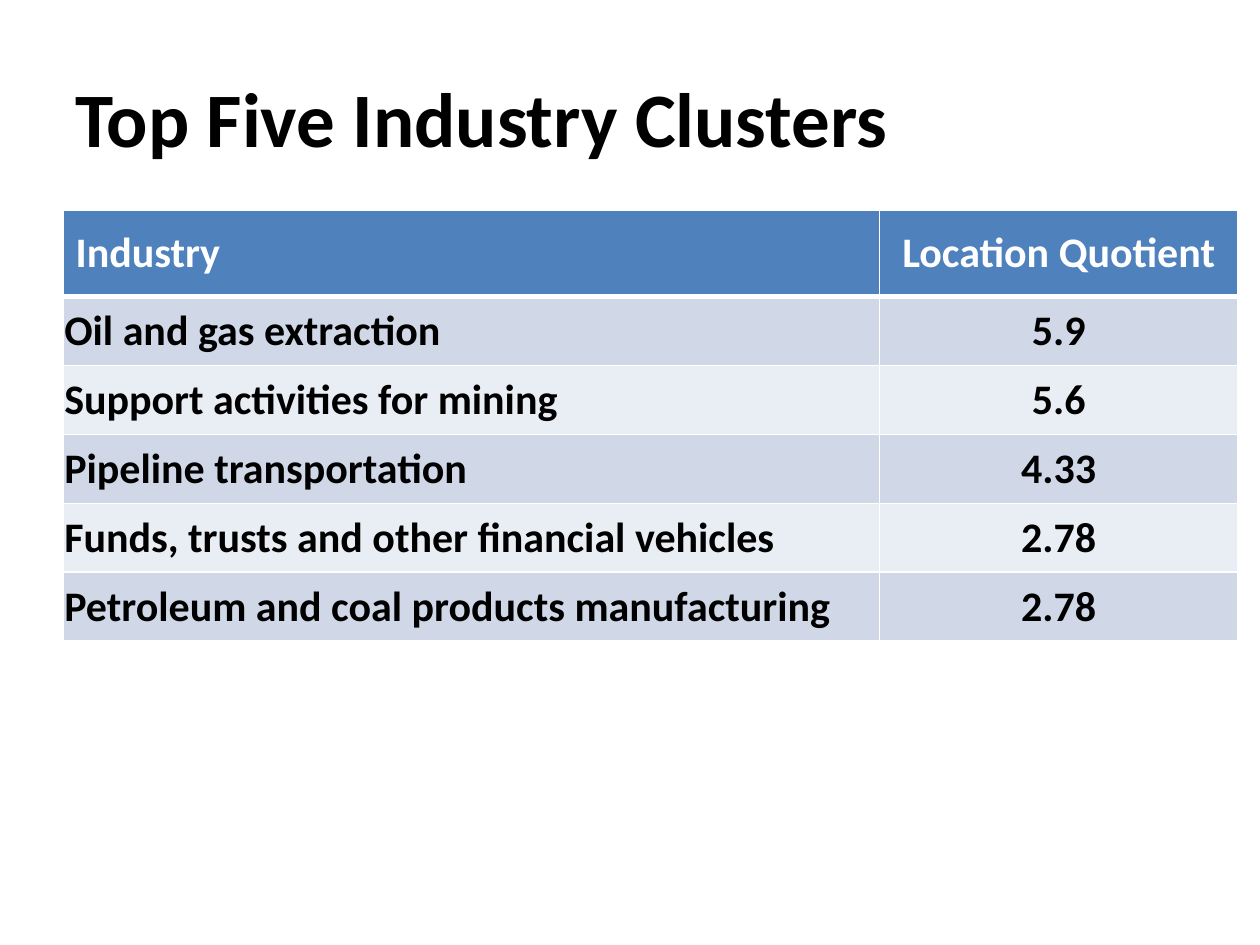
from lxml.etree import SubElement
from pptx import Presentation
from pptx.dml.color import RGBColor
from pptx.enum.text import MSO_ANCHOR, PP_ALIGN
from pptx.oxml.ns import qn
from pptx.util import Pt

BLACK = RGBColor(0x00, 0x00, 0x00)
WHITE = RGBColor(0xFF, 0xFF, 0xFF)
HEADER_BLUE = RGBColor(0x4F, 0x81, 0xBD)
BAND_DARK = RGBColor(0xD0, 0xD8, 0xE8)
BAND_LIGHT = RGBColor(0xE9, 0xED, 0xF4)

HEADINGS = ("Industry", "Location Quotient")
CLUSTERS = (
    ("Oil and gas extraction", "5.9"),
    ("Support activities for mining", "5.6"),
    ("Pipeline transportation", "4.33"),
    ("Funds, trusts and other financial vehicles", "2.78"),
    ("Petroleum and coal products manufacturing", "2.78"),
)


def write(frame, text, *, font, size, color, align=PP_ALIGN.LEFT, bold=True):
    paragraph = frame.paragraphs[0]
    paragraph.alignment = align
    run = paragraph.add_run()
    run.text = text
    run.font.name = font
    run.font.size = Pt(size)
    run.font.bold = bold
    run.font.color.rgb = color


def set_borders(cell, color, **widths):
    """Draw the cell's edges; call before filling, as the schema puts lines first."""
    properties = cell._tc.get_or_add_tcPr()
    for side, width in widths.items():
        edge = SubElement(properties, qn(f"a:ln{side}"), w=str(Pt(width)))
        fill = SubElement(edge, qn("a:solidFill"))
        SubElement(fill, qn("a:srgbClr"), val=str(color))


class ClusterSlide:
    font = "Calibri"
    title_size = 44
    table_size = 24
    column_widths = (466.5, 205)
    header_height = 49.5
    row_height = 39.4

    def __init__(self, presentation):
        self.slide = presentation.slides.add_slide(presentation.slide_layouts[6])

    def title(self, text, left, top, width, height):
        box = self.slide.shapes.add_textbox(Pt(left), Pt(top), Pt(width), Pt(height))
        frame = box.text_frame
        frame.word_wrap = True
        frame.vertical_anchor = MSO_ANCHOR.MIDDLE
        write(frame, text, font=self.font, size=self.title_size, color=BLACK)

    def table(self, headings, records, left, top):
        heights = [self.header_height] + [self.row_height] * len(records)
        table = self.slide.shapes.add_table(
            len(heights), len(headings), Pt(left), Pt(top),
            Pt(sum(self.column_widths)), Pt(sum(heights))).table
        for column, width in zip(table.columns, self.column_widths):
            column.width = Pt(width)
        for row, height in zip(table.rows, heights):
            row.height = Pt(height)
        for row_number, record in enumerate((headings, *records)):
            for column_number, text in enumerate(record):
                self.cell(table.cell(row_number, column_number), text,
                          row_number, column_number)

    def cell(self, cell, text, row_number, column_number):
        is_header = row_number == 0
        set_borders(cell, WHITE, L=1, R=1,
                    T=3 if row_number == 1 else 1, B=3 if is_header else 1)
        cell.fill.solid()
        if is_header:
            cell.fill.fore_color.rgb = HEADER_BLUE
        else:
            cell.fill.fore_color.rgb = BAND_DARK if row_number % 2 else BAND_LIGHT
            cell.margin_left = cell.margin_right = cell.margin_top = Pt(0.75)
            cell.margin_bottom = Pt(0)
        cell.vertical_anchor = MSO_ANCHOR.MIDDLE
        write(cell.text_frame, text, font=self.font, size=self.table_size,
              color=WHITE if is_header else BLACK,
              align=PP_ALIGN.CENTER if column_number else PP_ALIGN.LEFT)


def main():
    presentation = Presentation()
    presentation.slide_width = Pt(720)
    presentation.slide_height = Pt(540)
    slide = ClusterSlide(presentation)
    slide.title("Top Five Industry Clusters", 36, 21.6, 648, 90)
    slide.table(HEADINGS, CLUSTERS, 36, 120)
    presentation.save("out.pptx")


if __name__ == "__main__":
    main()
